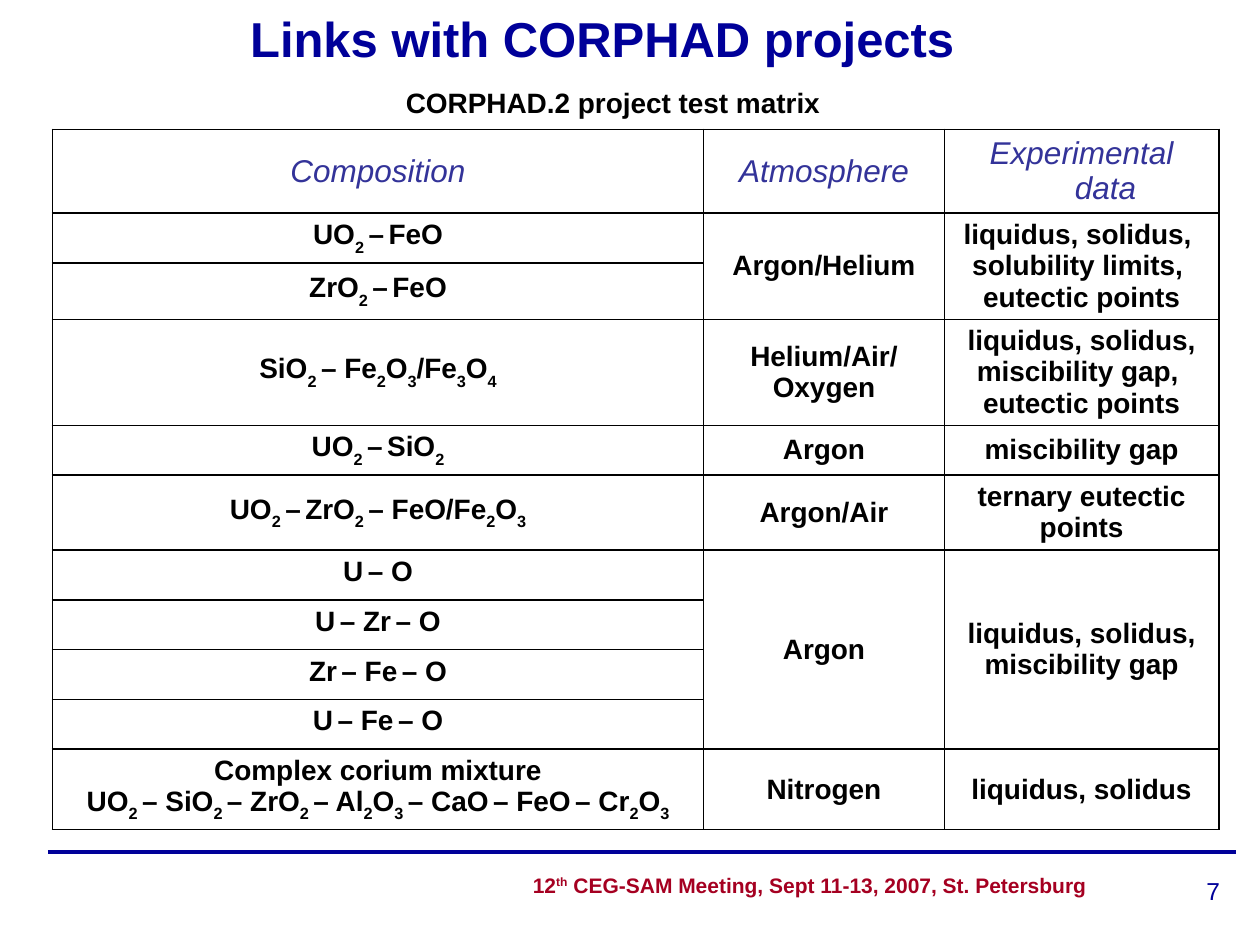
import pptx
import pptx.util
import pptx.dml.color
import pptx.enum.shapes
import pptx.enum.text
from lxml import etree

presentation = pptx.Presentation()
presentation.slide_width = pptx.util.Inches(10)
presentation.slide_height = pptx.util.Inches(7.5)
column = presentation.slide_width / 100
row = presentation.slide_height / 75
slide = presentation.slides.add_slide(presentation.slide_layouts[6])

LEFT = pptx.enum.text.PP_ALIGN.LEFT
CENTER = pptx.enum.text.PP_ALIGN.CENTER
RIGHT = pptx.enum.text.PP_ALIGN.RIGHT
TOP = pptx.enum.text.MSO_ANCHOR.TOP
MIDDLE = pptx.enum.text.MSO_ANCHOR.MIDDLE
NAVY, BLACK, INDIGO, CRIMSON = "000099", "000000", "333399", "A50021"


def color(value):
    return pptx.dml.color.RGBColor.from_string(value)


def write(frame, text, size, ink, align=CENTER, bold=True, italic=False, shift=-30):
    for index, line in enumerate(text.split("\n")):
        paragraph = frame.paragraphs[0] if index == 0 else frame.add_paragraph()
        paragraph.alignment = align
        for position, part in enumerate(line.split("|")):
            if not part:
                continue
            run = paragraph.add_run()
            run.text = part
            run.font.name = "Arial"
            run.font.size = pptx.util.Pt(size)
            run.font.bold = bold
            run.font.italic = italic
            run.font.color.rgb = color(ink)
            if position % 2:
                run.font._element.set("baseline", str(shift * 1000))


rule = slide.shapes.add_connector(
    pptx.enum.shapes.MSO_CONNECTOR.STRAIGHT,
    int(3.8 * column), int(67.6 * row), int(98.1 * column), int(67.6 * row))
rule.line.color.rgb = color(NAVY)
rule.line.width = pptx.util.Pt(2.25)
etree.SubElement(rule._element.spPr, pptx.oxml.ns.qn("a:effectLst"))

labels = [
    ("12|th| CEG-SAM Meeting, Sept 11-13, 2007, St. Petersburg",
     41.3, 68.72, 46.2, 3, 12, CRIMSON, LEFT, TOP, True, False),
    ("7", 77, 68.2, 20.8, 5, 14, NAVY, RIGHT, MIDDLE, False, True),
    ("CORPHAD.2 project test matrix",
     29.4, 6.34, 38.5, 3.3, 16, BLACK, CENTER, TOP, True, True),
    ("Links with CORPHAD projects",
     -3.2, -0.28, 102, 6.5, 28, NAVY, CENTER, MIDDLE, True, True),
]
for text, left, top, width, height, size, ink, align, anchor, bold, wrap in labels:
    box = slide.shapes.add_textbox(
        int(left * column), int(top * row), int(width * column), int(height * row))
    box.text_frame.word_wrap = wrap
    box.text_frame.vertical_anchor = anchor
    write(box.text_frame, text, size, ink, align, bold, shift=30)

matrix = [
    ("Composition", "Atmosphere", "Experimental data"),
    ("UO|2 |–| |FeO", "Argon/Helium",
     "liquidus, solidus, \nsolubility limits, \neutectic points"),
    ("ZrO|2 |–| |FeO", "", ""),
    ("SiO|2 |– Fe|2|O|3|/Fe|3|O|4", "Helium/Air/\nOxygen",
     "liquidus, solidus, miscibility gap, \neutectic points"),
    ("UO|2 |–| |SiO|2", "Argon", "miscibility gap"),
    ("UO|2 |–| |ZrO|2 |– FeO/Fe|2|O|3", "Argon/Air", "ternary eutectic points"),
    ("U| |– O", "Argon", "liquidus, solidus,\nmiscibility gap"),
    ("U| |– Zr| |– O", "", ""),
    ("Zr| |– Fe| |– O", "", ""),
    ("U| |– Fe| |– O", "", ""),
    ("Complex corium mixture\n"
     "UO|2 |– SiO|2 |– ZrO|2 |– Al|2|O|3 |– CaO| |– FeO| |– Cr|2|O|3",
     "Nitrogen", "liquidus, solidus"),
]
widths = [51.7, 19.1, 21.8]
heights = [6.65, 3.95, 4.47, 8.42, 3.95, 5.95, 3.95, 3.95, 3.95, 3.95, 6.4]
table = slide.shapes.add_table(
    len(heights), len(widths), int(4.15 * column), int(10.27 * row),
    int(sum(widths) * column), int(sum(heights) * row)).table
table.first_row = False
table.horz_banding = False
for table_column, width in zip(table.columns, widths):
    table_column.width = int(width * column)
for table_row, height in zip(table.rows, heights):
    table_row.height = int(height * row)

for first, last in [(1, 2), (6, 9)]:
    for index in (1, 2):
        table.cell(first, index).merge(table.cell(last, index))

for row_index, texts in enumerate(matrix):
    header = row_index == 0
    for column_index, text in enumerate(texts):
        cell = table.cell(row_index, column_index)
        cell.vertical_anchor = MIDDLE
        cell.margin_top = cell.margin_bottom = int(0.2 * row)
        cell.fill.background()
        properties = cell._tc.get_or_add_tcPr()
        for order, side in enumerate(("lnL", "lnR", "lnT", "lnB")):
            border = etree.Element(pptx.oxml.ns.qn("a:" + side), w="12700")
            fill = etree.SubElement(border, pptx.oxml.ns.qn("a:solidFill"))
            etree.SubElement(fill, pptx.oxml.ns.qn("a:srgbClr"), val=BLACK)
            properties.insert(order, border)
        if not text:
            continue
        if header:
            write(cell.text_frame, text, 18, INDIGO, bold=False, italic=True)
            indent = cell.text_frame.paragraphs[0]._p.get_or_add_pPr()
            indent.set("marL", str(int(3.8 * column)))
            indent.set("indent", str(int(-3.8 * column)))
        else:
            write(cell.text_frame, text, 16, BLACK)

presentation.save("out.pptx")
